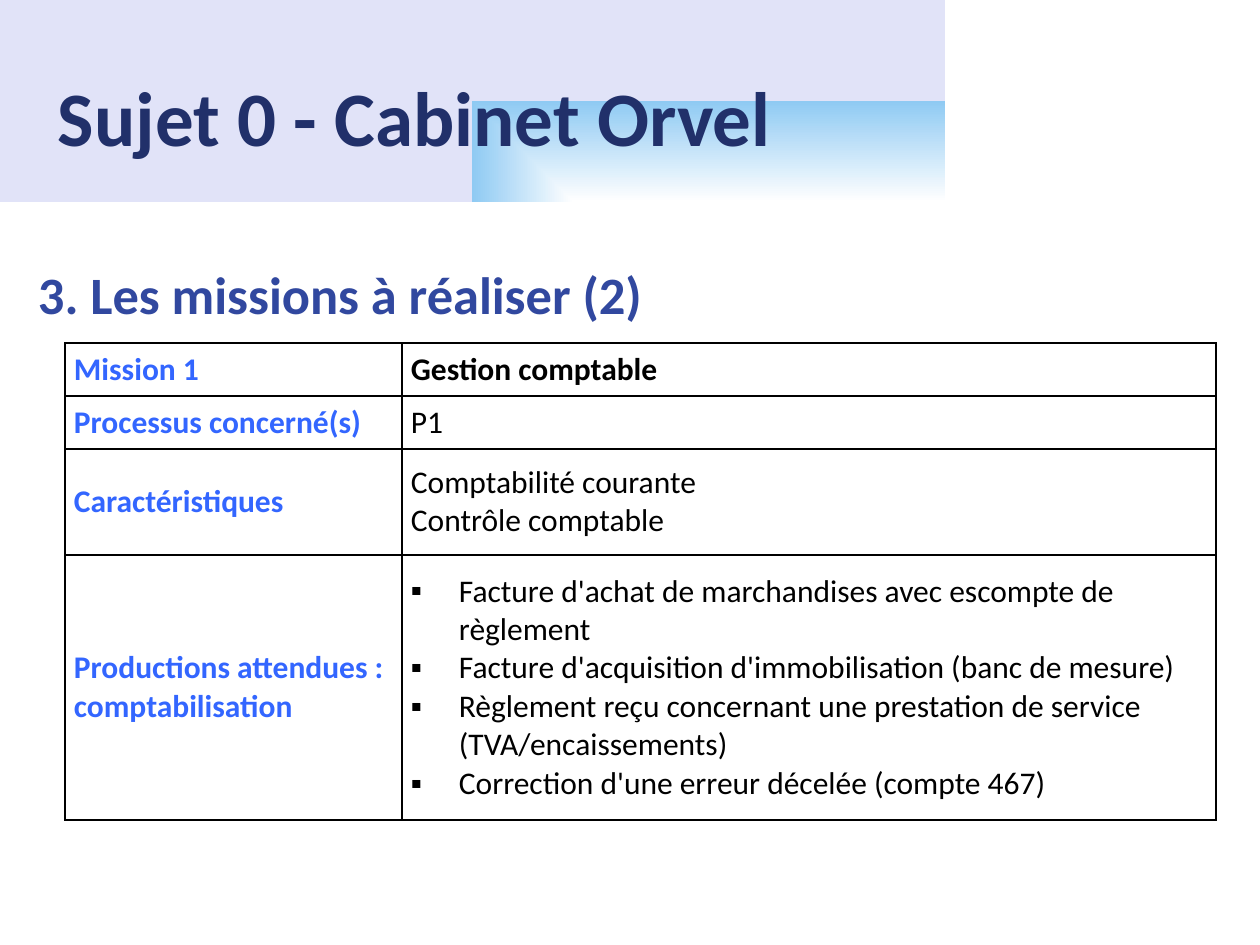
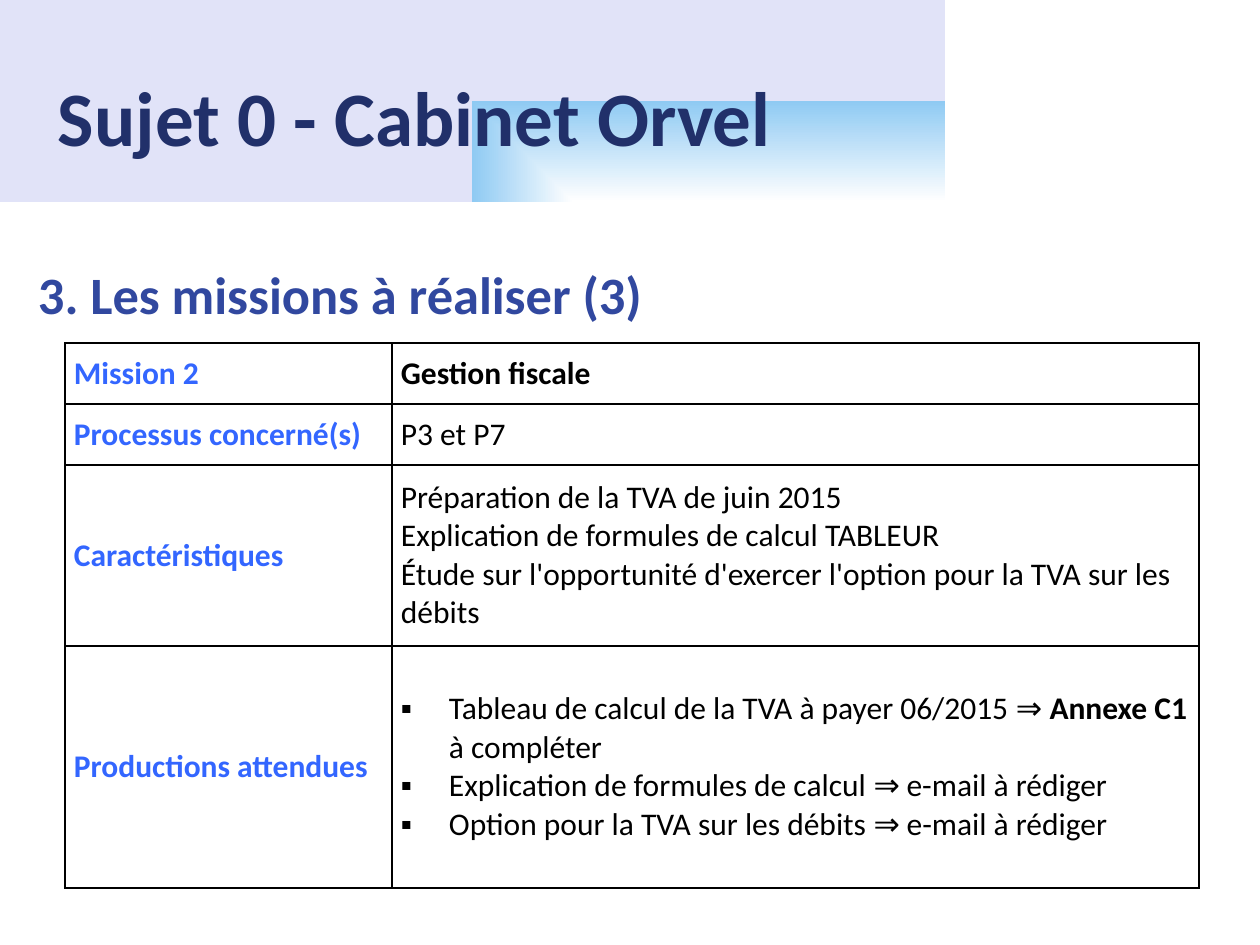
from lxml import etree
from pptx import Presentation
from pptx.dml.color import RGBColor as Rgb
from pptx.enum.shapes import MSO_SHAPE as Shape
from pptx.enum.text import MSO_ANCHOR as Anchor
from pptx.oxml import parse_xml
from pptx.oxml.ns import nsdecls, qn
from pptx.util import Emu, Pt

EMU_PER_PX = 914400 / 126
FONT = "Calibri"
COLORS = {
    "title": "21306A", "heading": "31489F", "label": "3366FF", "text": "000000",
    "glow": "FFFFFF", "sky": "8FCAF3", "lilac": "C1C7F2", "band": "E1E3F8",
}
FORMATS = {
    "title": {"size": Pt(44), "bold": True},
    "heading": {"size": Pt(30), "bold": True},
    "label": {"size": Pt(18), "bold": True},
    "text": {"size": Pt(18), "bold": False},
}
BAND_STOPS = [(0, "glow"), (100, "sky"), (100, "lilac"), (100, "band")]
INDENT = 48
BORDERS = ("a:lnL", "a:lnR", "a:lnT", "a:lnB")


def px(length):
    return Emu(round(length * EMU_PER_PX))


class Deck:
    def __init__(self, width, height):
        self.prs = Presentation()
        self.prs.slide_width, self.prs.slide_height = px(width), px(height)
        self.slide = None

    def new_slide(self):
        self.slide = self.prs.slides.add_slide(self.prs.slide_layouts[6])

    def band(self, *place):
        band = self.slide.shapes.add_shape(Shape.RECTANGLE, *map(px, place))
        band.shadow.inherit = False
        band.line.fill.background()
        # Gradient that spreads from the lower right corner
        stops = "".join(
            f'<a:gs pos="{share * 1000}"><a:srgbClr val="{COLORS[name]}"/></a:gs>'
            for share, name in BAND_STOPS)
        gradient = parse_xml(
            f'<a:gradFill {nsdecls("a")} rotWithShape="1"><a:gsLst>{stops}</a:gsLst>'
            '<a:path path="rect"><a:fillToRect l="100000" t="100000"/></a:path>'
            '</a:gradFill>')
        band.element.spPr.find(qn("a:prstGeom")).addnext(gradient)

    def run(self, paragraph, text, style, **changes):
        run = paragraph.add_run()
        run.text = text
        run.font.name = FONT
        run.font.color.rgb = Rgb.from_string(COLORS[style])
        for name, value in {**FORMATS[style], **changes}.items():
            setattr(run.font, name, value)

    def text(self, text, style, *place):
        frame = self.slide.shapes.add_textbox(*map(px, place)).text_frame
        settings = {"word_wrap": True, "vertical_anchor": Anchor.MIDDLE,
                    "margin_left": 0, "margin_right": 0,
                    "margin_top": 0, "margin_bottom": 0}
        for name, value in settings.items():
            setattr(frame, name, value)
        self.run(frame.paragraphs[0], text, style)

    def bullet(self, paragraph):
        props = paragraph._p.get_or_add_pPr()
        props.set("marL", str(px(INDENT)))
        props.set("indent", str(-px(INDENT)))
        etree.SubElement(props, qn("a:buFont")).set("typeface", FONT)
        etree.SubElement(props, qn("a:buChar")).set("char", "▪")

    def border(self, cell):
        props = cell._tc.get_or_add_tcPr()
        for side in BORDERS:
            line = etree.SubElement(props, qn(side), w=str(Pt(1)))
            fill = etree.SubElement(line, qn("a:solidFill"))
            etree.SubElement(fill, qn("a:srgbClr"), val=COLORS["text"])

    def cell(self, cell, lines, style, bulleted=False, bold=False):
        """Fill a cell; the odd parts between asterisks in a line are bold."""
        self.border(cell)
        cell.fill.background()
        settings = {"vertical_anchor": Anchor.MIDDLE, "margin_left": px(9),
                    "margin_right": px(9), "margin_top": 0, "margin_bottom": 0}
        for name, value in settings.items():
            setattr(cell, name, value)
        frame = cell.text_frame
        for number, line in enumerate(lines):
            paragraph = frame.add_paragraph() if number else frame.paragraphs[0]
            if bulleted:
                self.bullet(paragraph)
            for part, text in enumerate(line.split("*")):
                strong = bold or part % 2 == 1 or FORMATS[style]["bold"]
                self.run(paragraph, text, style, bold=strong)

    def table(self, left, top, widths, heights, rows):
        table = self.slide.shapes.add_table(
            len(rows), len(widths), px(left), px(top),
            px(sum(widths)), px(sum(heights))).table
        table.first_row = table.horz_banding = False
        for column, width in zip(table.columns, widths):
            column.width = px(width)
        for row, height in zip(table.rows, heights):
            row.height = px(height)
        last = len(rows) - 1
        for number, (label, content) in enumerate(rows):
            self.cell(table.cell(number, 0), label, "label")
            self.cell(table.cell(number, 1), content, "text",
                      bulleted=number == last, bold=number == 0)


MISSIONS = [
    {
        "heading": "3. Les missions à réaliser (2)",
        "widths": (337, 814), "heights": (53, 53, 106, 265),
        "rows": [
            (["Mission 1"], ["Gestion comptable"]),
            (["Processus concerné(s)"], ["P1"]),
            (["Caractéristiques"], ["Comptabilité courante", "Contrôle comptable"]),
            (["Productions attendues :", "comptabilisation"], [
                "Facture d'achat de marchandises avec escompte de règlement",
                "Facture d'acquisition d'immobilisation (banc de mesure)",
                "Règlement reçu concernant une prestation de service (TVA/encaissements)",
                "Correction d'une erreur décelée (compte 467)"]),
        ],
    },
    {
        "heading": "3. Les missions à réaliser (3)",
        "widths": (327, 807), "heights": (61, 61, 181, 242),
        "rows": [
            (["Mission 2"], ["Gestion fiscale"]),
            (["Processus concerné(s)"], ["P3 et P7"]),
            (["Caractéristiques"], [
                "Préparation de la TVA de juin 2015",
                "Explication de formules de calcul TABLEUR",
                "Étude sur l'opportunité d'exercer l'option pour la TVA sur les débits"]),
            (["Productions attendues"], [
                "Tableau de calcul de la TVA à payer 06/2015 ⇒ *Annexe C1* à compléter",
                "Explication de formules de calcul ⇒ e-mail à rédiger",
                "Option pour la TVA sur les débits ⇒ e-mail à rédiger"]),
        ],
    },
]


def main():
    deck = Deck(1260, 945)
    for mission in MISSIONS:
        deck.new_slide()
        # Title band
        deck.band(0, 0, 945, 202)
        deck.text("Sujet 0 - Cabinet Orvel", "title", 58, 36, 838, 159)
        # Mission heading and table
        deck.text(mission["heading"], "heading", 38, 262, 1185, 64)
        deck.table(65, 343, mission["widths"], mission["heights"], mission["rows"])
    deck.prs.save("out.pptx")


if __name__ == "__main__":
    main()
